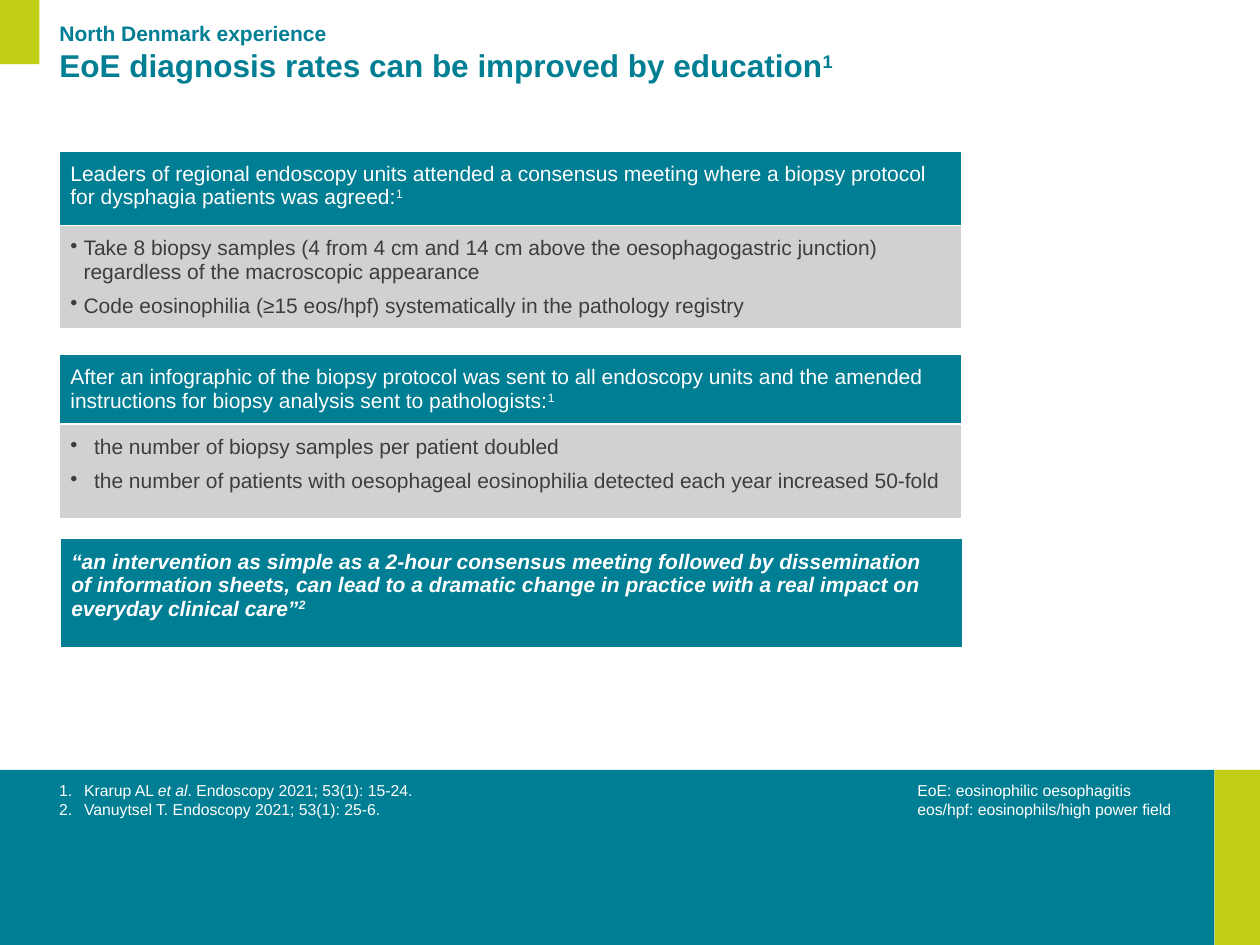
import pptx
import pptx.util
import pptx.dml.color
import pptx.enum.shapes
import pptx.enum.text
import pptx.oxml
import pptx.oxml.ns

Pt = pptx.util.Pt
TEAL, LIME, GREY, DARK, WHITE = "007E93", "C0CF15", "D1D1D1", "3A3F3A", "FFFFFF"
NS = pptx.oxml.ns.nsdecls("a")
DOT = f'<a:buChar {NS} char="•"/>'
NUM = f'<a:buAutoNum {NS} type="arabicPeriod"/>'
SUP = {"baseline": "30000"}


def paint(fmt, color):
    """Give a fill a solid colour, or a font its colour."""
    if hasattr(fmt, "solid"):
        fmt.solid()
        fmt = fmt.fore_color
    else:
        fmt = fmt.color
    fmt.rgb = pptx.dml.color.RGBColor.from_string(color)


def write(frame, paras, color, size=12, bullet=None, indent=0, after=0, **base):
    """Fill a frame with paragraphs, each a list of (text, format) runs."""
    for i, runs in enumerate(paras):
        para = frame.paragraphs[0] if i == 0 else frame.add_paragraph()
        para.alignment = pptx.enum.text.PP_ALIGN.LEFT
        para.space_before, para.space_after = Pt(0), Pt(after)
        if bullet:
            props = para._p.get_or_add_pPr()
            props.set("marL", str(Pt(indent)))
            props.set("indent", str(-Pt(indent)))
            props.append(pptx.oxml.parse_xml(bullet))
        for text, extra in runs:
            if text == "\n":
                para.add_line_break()
                mark = f'<a:rPr {NS} sz="{size * 100}"/>'
                para._p[-1].append(pptx.oxml.parse_xml(mark))
                continue
            run = para.add_run()
            run.text = text
            look = {"name": "Arial", "size": Pt(size), **base, **extra}
            shift = look.pop("baseline", None)
            for key, value in look.items():
                setattr(run.font, key, value)
            paint(run.font, color)
            if shift:
                run._r.get_or_add_rPr().set("baseline", shift)


deck = pptx.Presentation()
deck.slide_width, deck.slide_height = Pt(720), Pt(540)
slide = deck.slides.add_slide(deck.slide_layouts[5])
shapes = slide.shapes

# Colour bands
for x, y, w, h, color in [
    (0, 440, 694, 100, TEAL),
    (694, 440, 26, 100, LIME),
    (0, 0, 22.5, 36.75, LIME),
]:
    band = shapes.add_shape(pptx.enum.shapes.MSO_SHAPE.RECTANGLE,
                            Pt(x), Pt(y), Pt(w), Pt(h))
    band.shadow.inherit = False
    paint(band.fill, color)
    band.line.fill.background()

# Title
title = shapes.title
title.left, title.top, title.width, title.height = Pt(34), Pt(12), Pt(468), Pt(46)
frame = title.text_frame
for key, value in {
    "margin_left": 0, "margin_top": 0, "margin_right": 0, "margin_bottom": 0,
    "word_wrap": True, "auto_size": pptx.enum.text.MSO_AUTO_SIZE.NONE,
    "vertical_anchor": pptx.enum.text.MSO_ANCHOR.TOP,
}.items():
    setattr(frame, key, value)
big = {"size": Pt(18)}
write(frame, [[
    ("North Denmark experience", {}), ("\n", {}),
    ("EoE diagnosis rates can be improved by education", big),
    ("1", {**big, **SUP}),
]], TEAL, bold=True)

# Tables: left, top, then rows of height, fill, paragraphs, format
head = {"color": WHITE}
points = {"color": DARK, "bullet": DOT, "after": 6}
tables = [
    (33.75, 86.25, [
        (42.5, TEAL, [[
            ("Leaders of regional endoscopy units attended a consensus meeting "
             "where a biopsy protocol for dysphagia patients was agreed:", {}),
            ("1", SUP)]], head),
        (58.5, GREY, [
            [("Take 8 biopsy samples (4 from 4 cm and 14 cm above the "
              "oesophagogastric junction) regardless of the macroscopic "
              "appearance", {})],
            [("Code eosinophilia (≥15 eos/hpf) systematically in the "
              "pathology registry", {})],
        ], {**points, "indent": 7.5}),
    ]),
    (33.75, 202.5, [
        (39.5, TEAL, [[
            ("After an infographic of the biopsy protocol was sent to all "
             "endoscopy units and the amended instructions for biopsy analysis "
             "sent to pathologists:", {}),
            ("1", SUP)]], head),
        (54, GREY, [
            [("the number of biopsy samples per patient doubled", {})],
            [("the number of patients with oesophageal eosinophilia detected "
              "each year increased 50-fold", {})],
        ], {**points, "indent": 13.5}),
    ]),
    (34.25, 307.75, [
        (62.5, TEAL, [[
            ("“an intervention as simple as a 2-hour consensus meeting "
             "followed by dissemination", {}), ("\n", {}),
            ("of information sheets, can lead to a dramatic change in practice "
             "with a real impact on everyday clinical care”", {}),
            ("2", SUP)]], {**head, "bold": True, "italic": True}),
    ]),
]
for x, y, rows in tables:
    total = sum(row[0] for row in rows)
    grid = shapes.add_table(len(rows), 1, Pt(x), Pt(y), Pt(516), Pt(total)).table
    grid.first_row = grid.horz_banding = False
    for i, (height, color, paras, look) in enumerate(rows):
        grid.rows[i].height = Pt(height)
        cell = grid.cell(i, 0)
        for side in ("left", "top", "right", "bottom"):
            setattr(cell, "margin_" + side, Pt(6.5))
        for edge in ("lnT", "lnB"):
            cell._tc.get_or_add_tcPr().append(pptx.oxml.parse_xml(
                f'<a:{edge} {NS} w="{Pt(1)}"><a:solidFill>'
                f'<a:srgbClr val="{WHITE}"/></a:solidFill></a:{edge}>'))
        paint(cell.fill, color)
        write(cell.text_frame, paras, **look)

# Footer: references and abbreviations
for x, w, paras, look in [
    (33.75, 350, [
        [("Krarup AL ", {}), ("et al", {"italic": True}),
         (". Endoscopy 2021; 53(1): 15-24.", {})],
        [("Vanuytsel T. Endoscopy 2021; 53(1): 25-6.", {})],
    ], {"bullet": NUM, "indent": 14.25}),
    (524.25, 169, [
        [("EoE: eosinophilic oesophagitis", {})],
        [("eos/hpf: eosinophils/high power field", {})],
    ], {}),
]:
    frame = shapes.add_textbox(Pt(x), Pt(440), Pt(w), Pt(100)).text_frame
    for key, value in {
        "margin_left": 0, "margin_top": Pt(6), "margin_right": Pt(8.5),
        "margin_bottom": 0, "word_wrap": True,
    }.items():
        setattr(frame, key, value)
    write(frame, paras, WHITE, size=9, **look)

deck.save("out.pptx")
